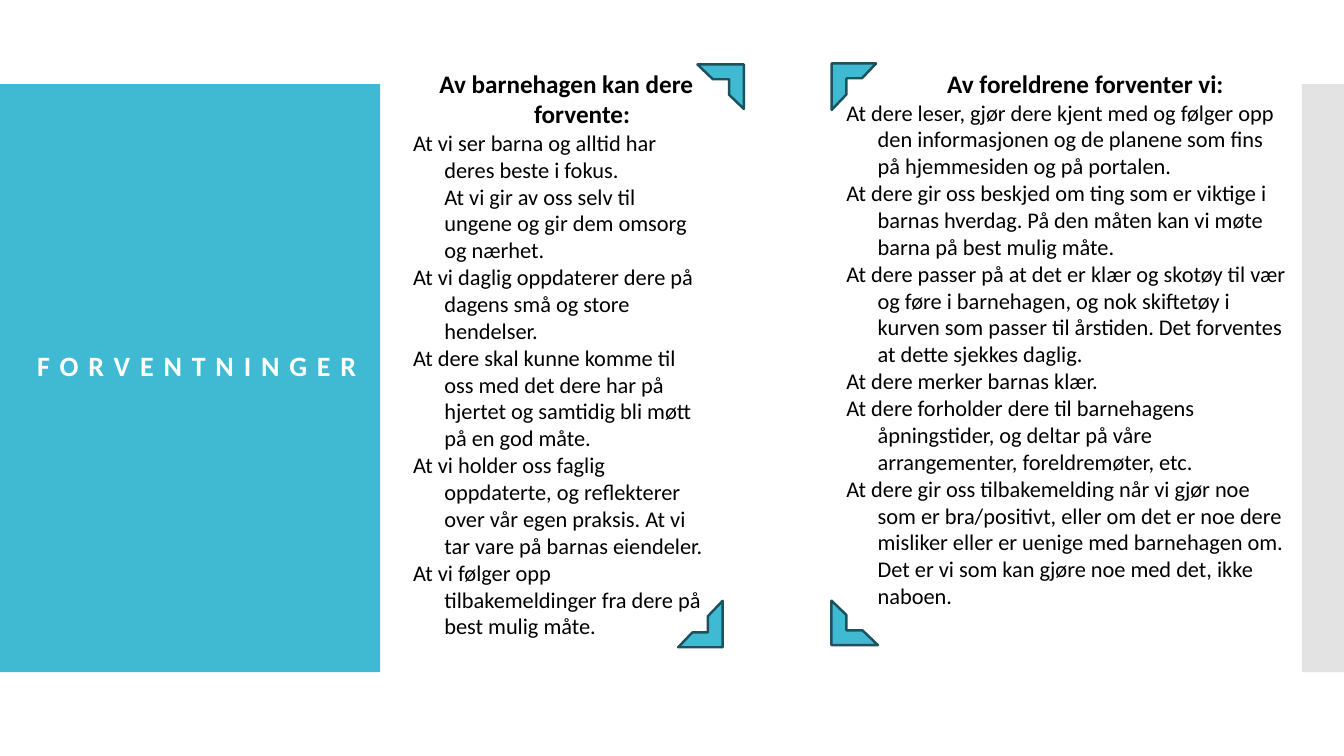
from lxml import etree
from pptx import Presentation
from pptx.dml.color import RGBColor
from pptx.enum import shapes, text
from pptx.oxml.ns import qn
from pptx.util import Cm, Pt

# Content
TITLE = "FORVENTNINGER"
COLUMNS = [
    {
        "box": (10.16, 1.6, 7.9, 15.57),
        "heading": "Av barnehagen kan dere forvente:",
        "heading_indent": (1.12, -0.79),
        "points": [
            "At vi ser barna og alltid har deres beste i fokus.\v"
            "At vi gir av oss selv til ungene og gir dem omsorg og nærhet.",
            "At vi daglig oppdaterer dere på dagens små og store hendelser.",
            "At dere skal kunne komme til oss med det dere har på hjertet og "
            "samtidig bli møtt på en god måte.",
            "At vi holder oss faglig oppdaterte, og reflekterer over vår egen "
            "praksis. At vi tar vare på barnas eiendeler.",
            "At vi følger opp tilbakemeldinger fra dere på best mulig måte.",
        ],
    },
    {
        "box": (21.08, 1.6, 11.63, 14.71),
        "heading": "Av foreldrene forventer vi:",
        "heading_indent": (0.92, 0),
        "points": [
            "At dere leser, gjør dere kjent med og følger opp den informasjonen "
            "og de planene som fins på hjemmesiden og på portalen.",
            "At dere gir oss beskjed om ting som er viktige i barnas hverdag. "
            "På den måten kan vi møte barna på best mulig måte.",
            "At dere passer på at det er klær og skotøy til vær og føre i "
            "barnehagen, og nok skiftetøy i kurven som passer til årstiden. "
            "Det forventes at dette sjekkes daglig.",
            "At dere merker barnas klær.",
            "At dere forholder dere til barnehagens åpningstider, og deltar på "
            "våre arrangementer, foreldremøter, etc.",
            "At dere gir oss tilbakemelding når vi gjør noe som er bra/positivt, "
            "eller om det er noe dere misliker eller er uenige med barnehagen om. "
            "Det er vi som kan gjøre noe med det, ikke naboen.",
        ],
    },
]
# Frame corners: left, top, rotation
CORNERS = [(20.96, 1.6, 0), (17.09, 15.14, 180), (17.6, 1.6, 90), (20.98, 15.11, 270)]
CORNER_SIZE = (1.12, 1.17)

SLIDE_SIZE = (33.87, 19.05)
BAND_TOP, BAND_HEIGHT = 2.12, 14.82
TITLE_WIDTH, EDGE_WIDTH = 9.58, 1.06
TITLE_BOX = (-10.19, 7.52, 30.3, 3.48)
POINT_INDENT = (0.79, -0.79)

THEME = {
    "accent": RGBColor(0x40, 0xBA, 0xD2),
    "outline": RGBColor(0x1C, 0x52, 0x5C),
    "edge": RGBColor(0xC8, 0xC8, 0xC8),
    "edge_alpha": 50,
    "title": {"name": "Calibri", "size": Pt(20), "bold": True},
    "title_color": RGBColor(0xFF, 0xFF, 0xFF),
    "title_spacing": 7,
    "heading": {"name": "Calibri", "size": Pt(18), "bold": True},
    "point": {"name": "Calibri", "size": Pt(16), "bold": False},
    "text_color": RGBColor(0, 0, 0),
}

deck = Presentation()
deck.slide_width, deck.slide_height = map(Cm, SLIDE_SIZE)
slide = deck.slides.add_slide(deck.slide_layouts[6])


def add_filled(preset, box, color):
    part = slide.shapes.add_shape(preset, *map(Cm, box))
    part.shadow.inherit = False
    part.fill.solid()
    part.fill.fore_color.rgb = color
    part.line.fill.background()
    return part


def add_text_frame(box, anchor):
    frame = slide.shapes.add_textbox(*map(Cm, box)).text_frame
    frame.word_wrap = True
    frame.vertical_anchor = anchor
    return frame


def write(paragraph, words, style, color, align, indent=(0, 0)):
    margin, first_line = map(Cm, indent)
    properties = paragraph._p.get_or_add_pPr()
    for key, value in {"marL": margin, "indent": first_line}.items():
        properties.set(key, str(int(value)))
    paragraph.text = words
    paragraph.alignment = align
    for run in paragraph.runs:
        for key, value in style.items():
            setattr(run.font, key, value)
        run.font.color.rgb = color


# Side bands
rectangle = shapes.MSO_SHAPE.RECTANGLE
add_filled(rectangle, (0, BAND_TOP, TITLE_WIDTH, BAND_HEIGHT), THEME["accent"])
edge = add_filled(
    rectangle,
    (SLIDE_SIZE[0] - EDGE_WIDTH, BAND_TOP, EDGE_WIDTH, BAND_HEIGHT),
    THEME["edge"],
)
edge_color = edge._element.spPr.find(qn("a:solidFill"))[0]
etree.SubElement(edge_color, qn("a:alpha")).set("val", str(THEME["edge_alpha"] * 1000))

# Title
title = add_text_frame(TITLE_BOX, text.MSO_ANCHOR.MIDDLE).paragraphs[0]
write(title, TITLE, THEME["title"], THEME["title_color"], text.PP_ALIGN.CENTER)
title.line_spacing = 0.9
title.space_after = Pt(6)
title.runs[0]._r.get_or_add_rPr().set("spc", str(THEME["title_spacing"] * 100))

# Expectation columns
for column in COLUMNS:
    frame = add_text_frame(column["box"], text.MSO_ANCHOR.TOP)
    frame.auto_size = text.MSO_AUTO_SIZE.SHAPE_TO_FIT_TEXT
    write(frame.paragraphs[0], column["heading"], THEME["heading"],
          THEME["text_color"], text.PP_ALIGN.CENTER, column["heading_indent"])
    for point in column["points"]:
        write(frame.add_paragraph(), point, THEME["point"],
              THEME["text_color"], text.PP_ALIGN.LEFT, POINT_INDENT)

# Frame corners
for left, top, rotation in CORNERS:
    corner = add_filled(shapes.MSO_SHAPE.HALF_FRAME, (left, top, *CORNER_SIZE), THEME["accent"])
    corner.rotation = rotation
    corner.line.color.rgb = THEME["outline"]
    corner.line.width = Pt(1.75)

deck.save("out.pptx")
